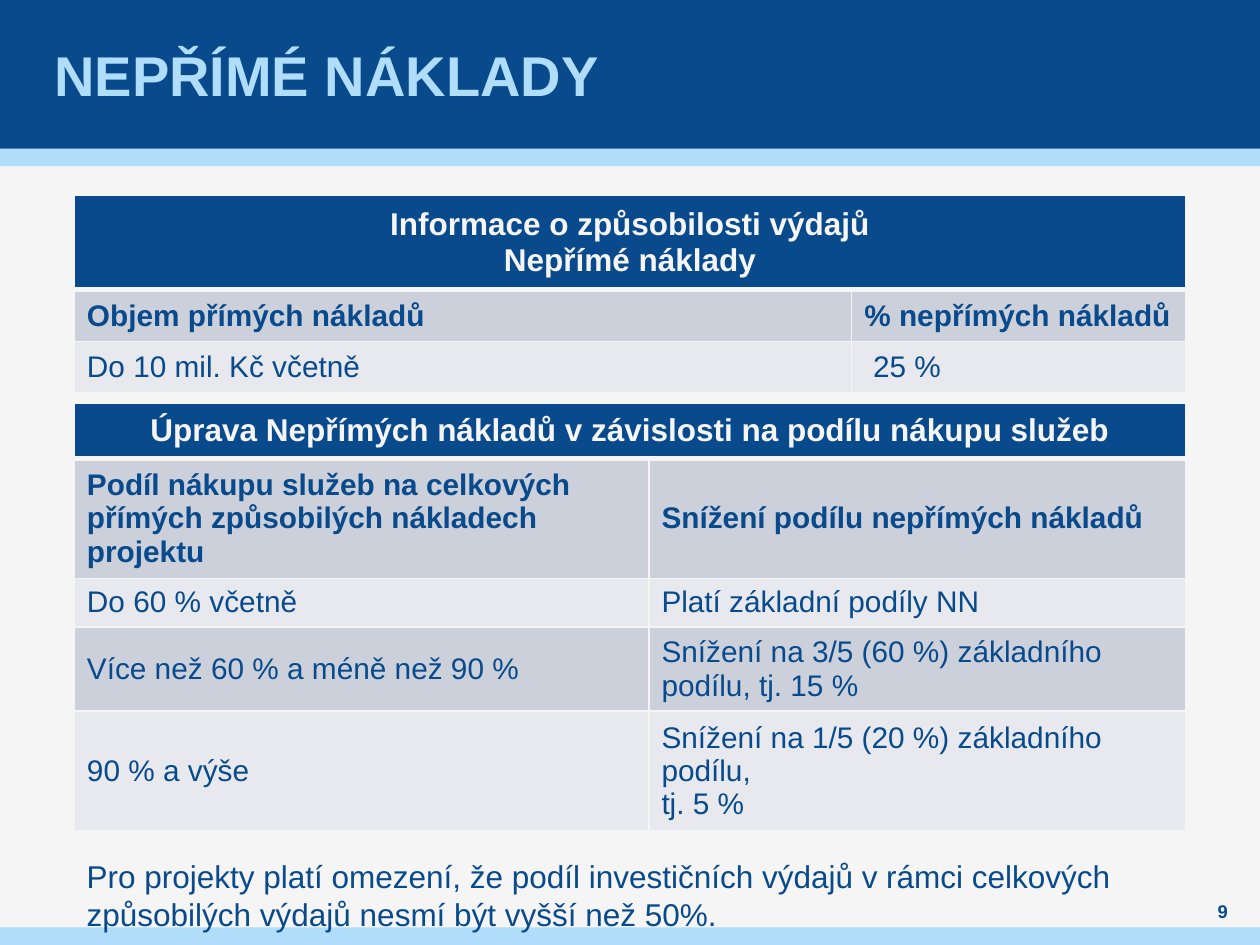
from dataclasses import dataclass

from lxml import etree
from pptx import Presentation
from pptx.dml.color import RGBColor
from pptx.enum.shapes import MSO_SHAPE
from pptx.enum.text import MSO_ANCHOR, PP_ALIGN
from pptx.oxml.ns import qn
from pptx.util import Inches, Pt

RECTANGLE = MSO_SHAPE.RECTANGLE
MIDDLE, TOP = MSO_ANCHOR.MIDDLE, MSO_ANCHOR.TOP
LEFT, CENTER = PP_ALIGN.LEFT, PP_ALIGN.CENTER


@dataclass(frozen=True)
class Theme:
    font: str = "Arial"
    navy: str = "084A8B"
    sky: str = "AFDDFA"
    paper: str = "F5F5F5"
    dark_band: str = "CCD0DA"
    light_band: str = "E7E9EE"
    title_size: float = 32
    lead_size: float = 18
    cell_size: float = 17
    number_size: float = 10.5


THEME = Theme()


def write_text(text_frame, text, size, color, bold=False, align=LEFT):
    text_frame.text = text
    for para in text_frame.paragraphs:
        para.alignment = align
        for span in para.runs:
            span.font.name = THEME.font
            span.font.size = Pt(size)
            span.font.bold = bold
            span.font.color.rgb = RGBColor.from_string(color)


def add_bar(page, top, height, color):
    bar = page.shapes.add_shape(
        RECTANGLE, 0, Inches(top), Inches(10), Inches(height))
    bar.shadow.inherit = False
    bar.fill.solid()
    bar.fill.fore_color.rgb = RGBColor.from_string(color)
    bar.line.fill.background()


def add_text(page, box, text, size, color, bold=False, align=LEFT,
             anchor=TOP, side_inset=0.1, end_inset=0.05):
    text_box = page.shapes.add_textbox(*map(Inches, box))
    text_frame = text_box.text_frame
    text_frame.word_wrap = True
    text_frame.vertical_anchor = anchor
    text_frame.margin_left = text_frame.margin_right = Inches(side_inset)
    text_frame.margin_top = text_frame.margin_bottom = Inches(end_inset)
    write_text(text_frame, text, size, color, bold, align)
    return text_frame


def set_borders(cell, bottom_width):
    """Draw the four edges; they must come before the fill in the cell."""
    properties = cell._tc.get_or_add_tcPr()
    widths = {"lnL": 1, "lnR": 1, "lnT": 1, "lnB": bottom_width}
    for index, (edge, width) in enumerate(widths.items()):
        line = etree.Element(qn(f"a:{edge}"), w=str(Pt(width)))
        fill = etree.SubElement(line, qn("a:solidFill"))
        etree.SubElement(fill, qn("a:srgbClr"), val=THEME.paper)
        properties.insert(index, line)


def add_banded_table(page, box, column_widths, row_heights, heading, rows):
    """Merged heading, bold column labels, then alternating bands."""
    table = page.shapes.add_table(
        len(row_heights), len(column_widths), *map(Inches, box)).table
    for column, width in zip(table.columns, column_widths):
        column.width = Inches(width)
    for row, height in zip(table.rows, row_heights):
        row.height = Inches(height)

    table.cell(0, 0).merge(table.cell(0, len(column_widths) - 1))
    bands = (THEME.light_band, THEME.dark_band)
    for row_index, texts in enumerate([(heading, ""), *rows]):
        is_heading = row_index == 0
        for column_index, text in enumerate(texts):
            cell = table.cell(row_index, column_index)
            cell.vertical_anchor = MIDDLE
            cell.fill.solid()
            cell.fill.fore_color.rgb = RGBColor.from_string(
                THEME.navy if is_heading else bands[row_index % 2])
            set_borders(cell, 3 if is_heading else 1)
            if is_heading:
                write_text(cell.text_frame, text, THEME.lead_size,
                           THEME.paper, True, CENTER)
            else:
                write_text(cell.text_frame, text, THEME.cell_size,
                           THEME.navy, row_index == 1)
    return table


def add_frame(page, title, number):
    page.background.fill.solid()
    page.background.fill.fore_color.rgb = RGBColor.from_string(THEME.paper)
    add_bar(page, 1.18, 0.14, THEME.sky)
    add_bar(page, 0, 1.18, THEME.navy)
    add_bar(page, 7.36, 0.14, THEME.sky)
    add_text(page, (0.39, 0, 9.21, 1.18), title, THEME.title_size, THEME.sky,
             True, anchor=MIDDLE, side_inset=0.04, end_inset=0)
    add_text(page, (9.45, 7.13, 0.51, 0.2), number, THEME.number_size,
             THEME.navy, True, CENTER, MIDDLE, side_inset=0, end_inset=0)


def add_rate_table(page, box):
    table = add_banded_table(
        page, box, (6.17, 2.65), (0.75, 0.41, 0.41),
        "Informace o způsobilosti výdajů\nNepřímé náklady",
        [("Objem přímých nákladů", "% nepřímých nákladů"),
         ("Do 10 mil. Kč včetně", "25 %")])
    table.cell(2, 1).margin_left = Inches(0.17)


def add_reduction_table(page, box):
    add_banded_table(
        page, box, (4.56, 4.26), (0.44, 0.95, 0.38, 0.67, 0.95),
        "Úprava Nepřímých nákladů v závislosti na podílu nákupu služeb",
        [("Podíl nákupu služeb na celkových přímých způsobilých "
          "nákladech projektu", "Snížení podílu nepřímých nákladů"),
         ("Do 60 % včetně", "Platí základní podíly NN"),
         ("Více než 60 % a méně než 90 %",
          "Snížení na 3/5 (60 %) základního podílu, tj. 15 %"),
         ("90 % a výše",
          "Snížení na 1/5 (20 %) základního podílu,\ntj. 5 %")])


def add_limit_note(page, box):
    add_text(page, box,
             "Pro projekty platí omezení, že podíl investičních výdajů "
             "v rámci celkových\nzpůsobilých výdajů nesmí být vyšší než 50%.",
             THEME.lead_size, THEME.navy)


def main():
    deck = Presentation()
    deck.slide_width, deck.slide_height = Inches(10), Inches(7.5)
    page = deck.slides.add_slide(deck.slide_layouts[6])

    # Bars, title and page number
    add_frame(page, "NEPŘÍMÉ NÁKLADY", "9")
    # Tables of rates and reductions
    add_rate_table(page, (0.59, 1.55, 8.82, 1.57))
    add_reduction_table(page, (0.59, 3.2, 8.82, 3.39))
    # Closing note
    add_limit_note(page, (0.59, 6.75, 8.9, 0.71))

    deck.save("out.pptx")


if __name__ == "__main__":
    main()
